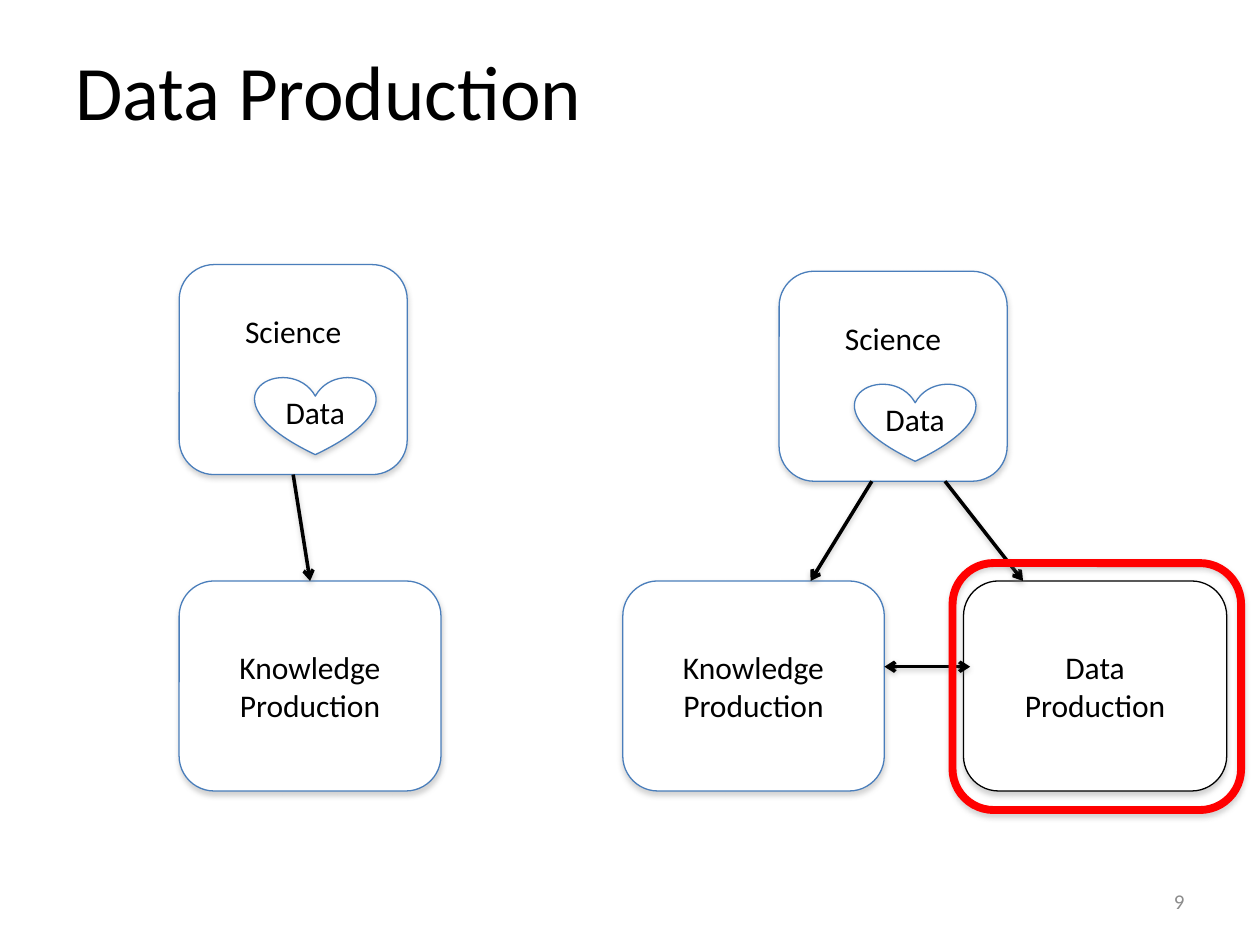
from lxml.etree import SubElement
from pptx import Presentation
from pptx.dml.color import RGBColor
from pptx.enum.shapes import MSO_CONNECTOR as Connector, MSO_SHAPE as Shape
from pptx.enum.text import MSO_ANCHOR as Anchor, PP_ALIGN as Align
from pptx.oxml.ns import qn
from pptx.util import Pt

BLACK = RGBColor(0x00, 0x00, 0x00)
WHITE = RGBColor(0xFF, 0xFF, 0xFF)
BLUE = RGBColor(0x4A, 0x7E, 0xBB)
RED = RGBColor(0xFF, 0x00, 0x00)
GRAY = RGBColor(0x8C, 0x8C, 0x8C)
SHADOW = RGBColor(0x80, 0x80, 0x80)
FONT = "Calibri"
BOX_HEIGHT = 120
SCIENCE_WIDTH = 130.3
PRODUCTION_TOP = 332


def add_shadow(properties, distance, opacity):
    effects = properties.find(qn("a:effectLst"))
    if effects is None:
        effects = SubElement(properties, qn("a:effectLst"))
    shadow = SubElement(effects, qn("a:outerShdw"), blurRad=str(Pt(3.1)),
                        dist=str(Pt(distance)), dir="5400000", rotWithShape="0")
    color = SubElement(shadow, qn("a:srgbClr"), val=str(SHADOW))
    SubElement(color, qn("a:alpha"), val=str(opacity * 1000))


def write_lines(frame, lines, size, color, align):
    frame.vertical_anchor = Anchor.MIDDLE
    for index, line in enumerate(lines):
        paragraph = frame.paragraphs[0] if index == 0 else frame.add_paragraph()
        paragraph.alignment = align
        run = paragraph.add_run()
        run.text = line
        run.font.size = Pt(size)
        run.font.name = FONT
        run.font.color.rgb = color


def add_label(slide, left, top, width, height, text, size, color, align):
    label = slide.shapes.add_textbox(Pt(left), Pt(top), Pt(width), Pt(height))
    label.text_frame.word_wrap = True
    write_lines(label.text_frame, [text], size, color, align)


def add_node(slide, kind, left, top, width, height, lines=(), line_color=BLUE,
             line_width=0.75, filled=True):
    node = slide.shapes.add_shape(kind, Pt(left), Pt(top), Pt(width), Pt(height))
    node.shadow.inherit = False
    add_shadow(node._element.spPr, 1.8, 35)
    if filled:
        node.fill.solid()
        node.fill.fore_color.rgb = WHITE
    else:
        node.fill.background()
    node.line.color.rgb = line_color
    node.line.width = Pt(line_width)
    write_lines(node.text_frame, lines, 18, BLACK, Align.CENTER)
    return node


def add_science(slide, left, top):
    science = add_node(slide, Shape.ROUNDED_RECTANGLE, left, top,
                       SCIENCE_WIDTH, BOX_HEIGHT, ["Science"])
    science.text_frame.margin_bottom = Pt(47.6)
    heart = add_node(slide, Shape.HEART, left + 43.3, top + 64, 69, 44.6, ["Data"])
    heart.text_frame.word_wrap = False
    return science


def add_production(slide, left, width, subject, line_color=BLUE):
    return add_node(slide, Shape.ROUNDED_RECTANGLE, left, PRODUCTION_TOP, width,
                    BOX_HEIGHT, [subject, "Production"], line_color)


def add_arrow(slide, start=(0, 0), end=(0, 0), both_ends=False):
    arrow = slide.shapes.add_connector(
        Connector.STRAIGHT, *(Pt(value) for value in (*start, *end)))
    arrow.line.color.rgb = BLACK
    arrow.line.width = Pt(2)
    outline = arrow.line._get_or_add_ln()
    for name in ("a:headEnd", "a:tailEnd") if both_ends else ("a:tailEnd",):
        SubElement(outline, qn(name), type="arrow")
    add_shadow(arrow._element.spPr, 1.6, 38)
    return arrow


def add_single_model(slide):
    science = add_science(slide, 102.4, 151.2)
    knowledge = add_production(slide, 102.4, 149.6, "Knowledge")
    arrow = add_arrow(slide)
    arrow.begin_connect(science, 2)
    arrow.end_connect(knowledge, 0)


def add_split_model(slide):
    add_science(slide, 445.2, 155)
    add_production(slide, 355.9, 149.4, "Knowledge")
    add_production(slide, 550.6, 150.4, "Data", BLACK)
    add_arrow(slide, (498.2, 275), (463.2, PRODUCTION_TOP))
    add_arrow(slide, (540, 275), (584.6, PRODUCTION_TOP))
    add_arrow(slide, (505.4, 381), (554.4, 381), both_ends=True)
    add_node(slide, Shape.ROUNDED_RECTANGLE, 544.3, 321.8, 164.9, 141.1,
             line_color=RED, line_width=4.5, filled=False)


def main():
    presentation = Presentation()
    presentation.slide_width = Pt(720)
    presentation.slide_height = Pt(540)
    slide = presentation.slides.add_slide(presentation.slide_layouts[6])
    add_label(slide, 36, 6.5, 648, 90, "Data Production", 44, BLACK, Align.LEFT)
    add_single_model(slide)
    add_split_model(slide)
    add_label(slide, 516, 500.5, 168, 28.8, "9", 12, GRAY, Align.RIGHT)
    presentation.save("out.pptx")


if __name__ == "__main__":
    main()
